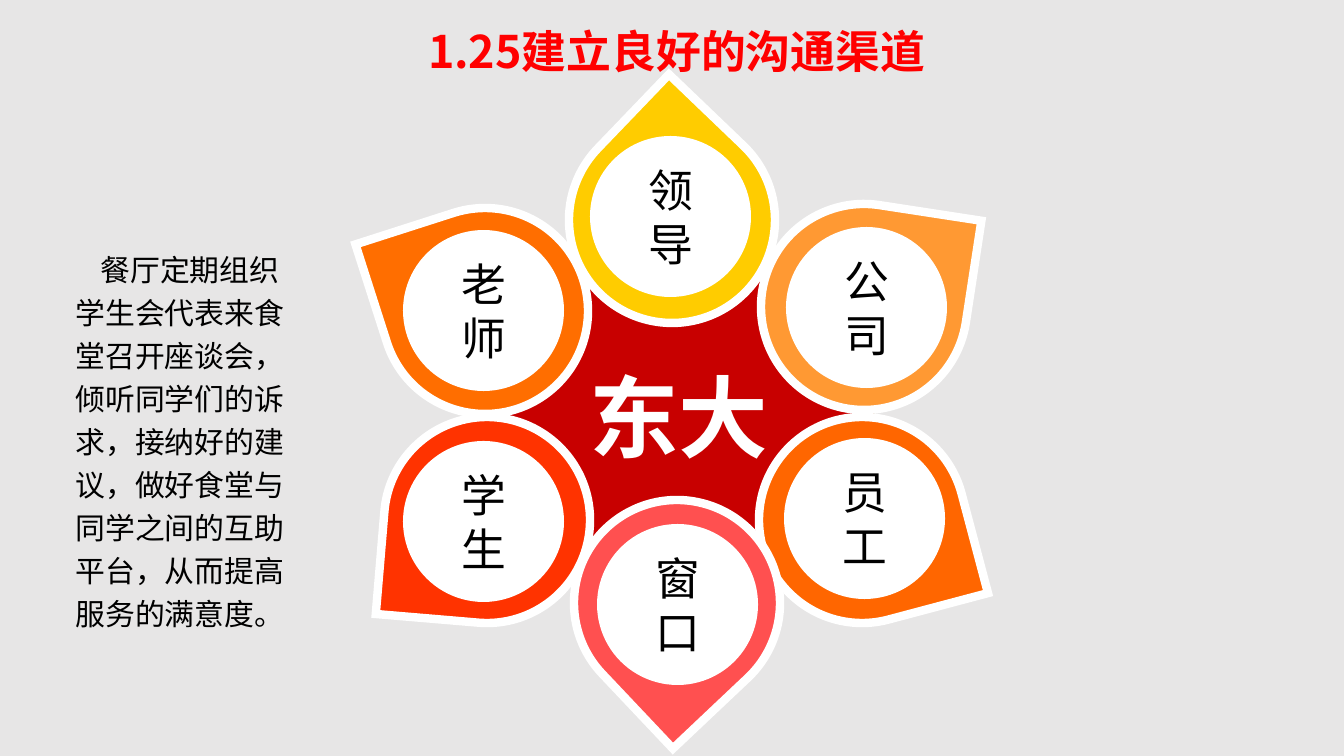
from pptx import Presentation
from pptx.dml.color import RGBColor
from pptx.enum.shapes import MSO_SHAPE as SHAPE
from pptx.enum.text import MSO_ANCHOR as ANCHOR, PP_ALIGN as ALIGN
from pptx.oxml.ns import qn
from pptx.util import Pt
from lxml.etree import SubElement

# Content
TITLE = "1.25建立良好的沟通渠道"
BODY = ("餐厅定期组织学生会代表来食堂召开座谈会，倾听同学们的诉求，接纳好的建议，"
        "做好食堂与同学之间的互助平台，从而提高服务的满意度。")
HUB = "东大"
# label, colour, rotation, petal left/top, disc left/top
PETALS = [
    ("老师", "FF6E00", 252.2, (382, 208), (403, 230)),
    ("领导", "FFCC00", 313.8, (569, 117), (590, 136)),
    ("公司", "FF9933", 8.7, (761, 204), (786, 227)),
    ("员工", "FF6600", 75.1, (759, 417), (784, 438)),
    ("窗口", "FF5050", 136.6, (574, 500), (597, 524)),
    ("学生", "FF3300", 184.8, (384, 417), (403, 441)),
]

# Theme and layout, lengths in px
SC, JP = "Noto Sans CJK SC", "Noto Sans CJK JP"
THEME = {
    "back": "E7E6E6", "white": "FFFFFF", "hub": "C80000", "hub_line": "70AD47",
    "hub_text": dict(size=48, name=SC, color="FFFFFF", bold=True),
    "label": dict(size=24, name=SC, color="000000"),
    "title": dict(size=24, name=JP, color="FF0000", bold=True),
    "body": dict(size=16, name=JP, color="000000"),
}
PETAL, DISC = 206, 161
BODY_INDENT, BODY_INSET = 20, 29


def px(n):
    return round(n * 914400 / 134.4)


def rgb(name):
    return RGBColor.from_string(name)


def write(sp, text, style):
    tf = sp.text_frame
    tf.word_wrap = True
    p = tf.paragraphs[0]
    p.alignment = ALIGN.CENTER
    r = p.add_run()
    r.text = text
    values = dict(style, size=Pt(style["size"]))
    r.font.color.rgb = rgb(values.pop("color"))
    for key, value in values.items():
        setattr(r.font, key, value)
    SubElement(r.font._element, qn("a:ea")).set("typeface", style["name"])
    return tf


def add_shape(shapes, kind, box, fill, line=None, width=0):
    sp = shapes.add_shape(kind, *map(px, box))
    sp.shadow.inherit = False
    sp.fill.solid()
    sp.fill.fore_color.rgb = rgb(fill)
    if line:
        sp.line.color.rgb = rgb(line)
        sp.line.width = Pt(width)
        # Sharp corners
        SubElement(sp.line._get_or_add_ln(), qn("a:miter")).set("lim", "800000")
    else:
        sp.line.fill.background()
    sp.text_frame.vertical_anchor = ANCHOR.MIDDLE
    return sp


prs = Presentation()
prs.slide_width, prs.slide_height = px(1344), px(756)
s = prs.slides.add_slide(prs.slide_layouts[6])
s.background.fill.solid()
s.background.fill.fore_color.rgb = rgb(THEME["back"])

# Hub
hub = add_shape(s.shapes, SHAPE.OVAL, (484, 226, 390, 380),
                THEME["hub"], THEME["hub_line"], 0.5)
write(hub, HUB, THEME["hub_text"])

# Petals, each grouped with its labelled disc
for label, color, angle, petal_at, disc_at in PETALS:
    group = s.shapes.add_group_shape()
    petal = add_shape(group.shapes, SHAPE.TEAR, (*petal_at, PETAL, PETAL),
                      color, THEME["white"], 4.5)
    petal.rotation = angle
    disc = add_shape(group.shapes, SHAPE.OVAL, (*disc_at, DISC, DISC), THEME["white"])
    write(disc, label, THEME["label"])

# Body text with a first-line indent
body = s.shapes.add_textbox(*map(px, (62, 216, 236, 465)))
tf = write(body, BODY, THEME["body"])
tf.margin_top = px(BODY_INSET)
p = tf.paragraphs[0]
p.line_spacing = 1.2
p._p.get_or_add_pPr().set("indent", str(px(BODY_INDENT)))

# Title
title = s.shapes.add_textbox(*map(px, (348, 17, 657, 86)))
write(title, TITLE, THEME["title"])

prs.save("out.pptx")
